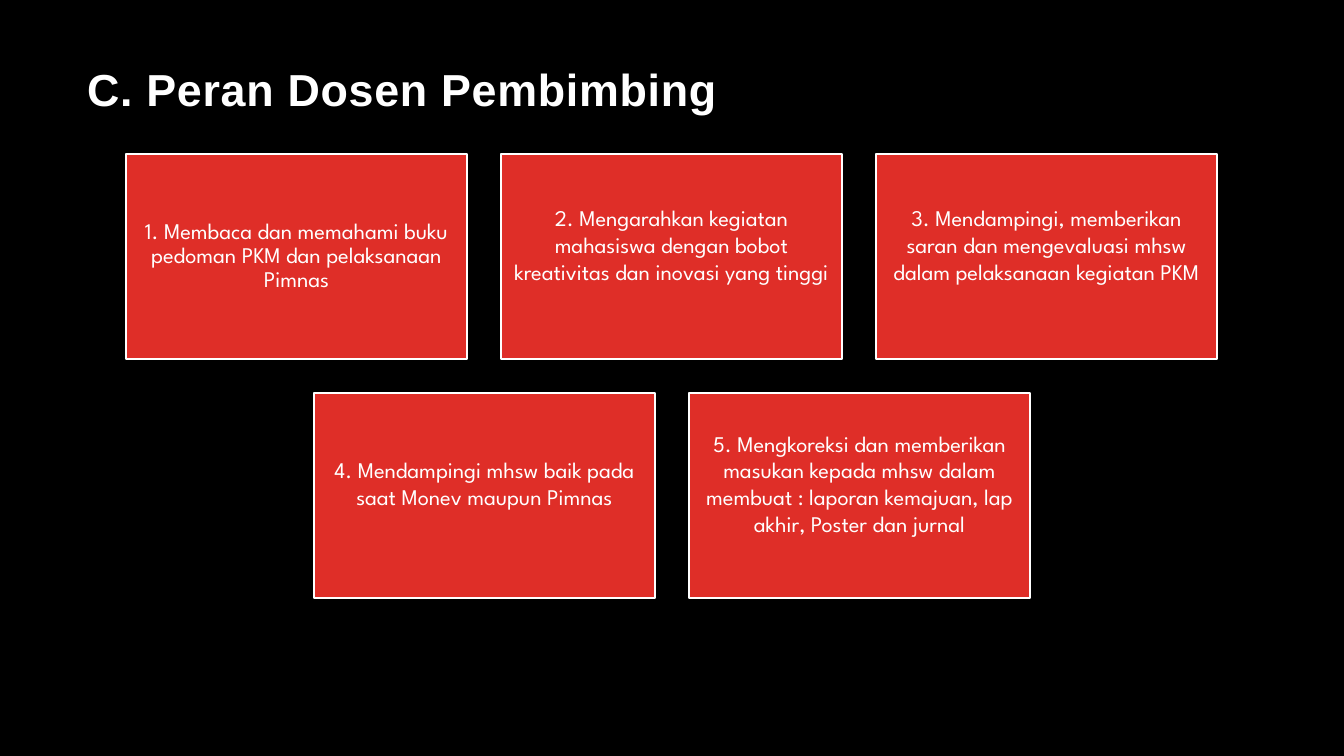
from pptx import Presentation
from pptx import util as u
from pptx.dml.color import RGBColor
from pptx.enum import shapes, text

BLACK = RGBColor(0x00, 0x00, 0x00)
WHITE = RGBColor(0xFF, 0xFF, 0xFF)
RED = RGBColor(0xDF, 0x2E, 0x28)
SCALE = 914400 / 100.8
WIDE, HIGH = 1344, 756
CARD_W, CARD_H, GAP, TOP = 341, 205, 34, 154
PAD, LIFT = 7, 24
HEAD = dict(name="Arial", size=u.Pt(32), bold=True)
BODY = dict(name="League Spartan", size=u.Pt(16), bold=False)
TITLE = "C. Peran Dosen Pembimbing"
ROWS = [
    [
        "1. Membaca dan memahami buku pedoman PKM dan pelaksanaan Pimnas",
        "2. Mengarahkan kegiatan mahasiswa dengan bobot kreativitas dan inovasi yang tinggi",
        "3. Mendampingi, memberikan saran dan mengevaluasi mhsw dalam pelaksanaan kegiatan PKM",
    ],
    [
        "4. Mendampingi mhsw baik pada saat Monev maupun Pimnas",
        "5. Mengkoreksi dan memberikan masukan kepada mhsw dalam membuat : "
        "laporan kemajuan, lap akhir, Poster dan jurnal",
    ],
]


def px(count):
    return u.Emu(round(count * SCALE))


def apply(item, **values):
    for key, value in values.items():
        setattr(item, key, value)


class Deck:
    """Holds the style and the current slide, and draws each kind of element."""

    def __init__(self):
        self.show = Presentation()
        apply(self.show, slide_width=px(WIDE), slide_height=px(HIGH))
        self.slide = self.show.slides.add_slide(self.show.slide_layouts[5])
        fill = self.slide.background.fill
        fill.solid()
        fill.fore_color.rgb = BLACK

    def label(self, frame, words, style, align, space):
        apply(frame, word_wrap=True, vertical_anchor=text.MSO_ANCHOR.MIDDLE,
              auto_size=text.MSO_AUTO_SIZE.NONE)
        para = frame.paragraphs[0]
        apply(para, alignment=align, line_spacing=space)
        run = para.add_run()
        run.text = words
        apply(run.font, **style)
        run.font.color.rgb = WHITE
        return run

    def title(self, words, left, top, width, height):
        head = self.slide.shapes.title
        apply(head, left=px(left), top=px(top), width=px(width), height=px(height))
        run = self.label(head.text_frame, words, HEAD, text.PP_ALIGN.LEFT, 0.9)
        run._r.get_or_add_rPr().set("spc", "50")

    def card(self, words, left, top, space, lift):
        box = self.slide.shapes.add_shape(
            shapes.MSO_SHAPE.RECTANGLE, px(left), px(top), px(CARD_W), px(CARD_H))
        box.shadow.inherit = False
        box.fill.solid()
        box.fill.fore_color.rgb = RED
        box.line.color.rgb = WHITE
        box.line.width = u.Pt(1)
        apply(box.text_frame, margin_left=px(PAD), margin_right=px(PAD),
              margin_top=px(PAD), margin_bottom=px(PAD + lift))
        self.label(box.text_frame, words, BODY, text.PP_ALIGN.CENTER, space)

    def grid(self, rows):
        for row, cards in enumerate(rows):
            span = len(cards) * (CARD_W + GAP) - GAP
            left = (WIDE - span) // 2
            for col, words in enumerate(cards):
                first = row == col == 0
                self.card(words, left + col * (CARD_W + GAP), TOP + row * (CARD_H + GAP),
                          0.9 if first else 1.0, 0 if first else LIFT)


def main():
    deck = Deck()
    deck.title(TITLE, 77, 21, 950, 142)
    deck.grid(ROWS)
    deck.show.save("out.pptx")


if __name__ == "__main__":
    main()
